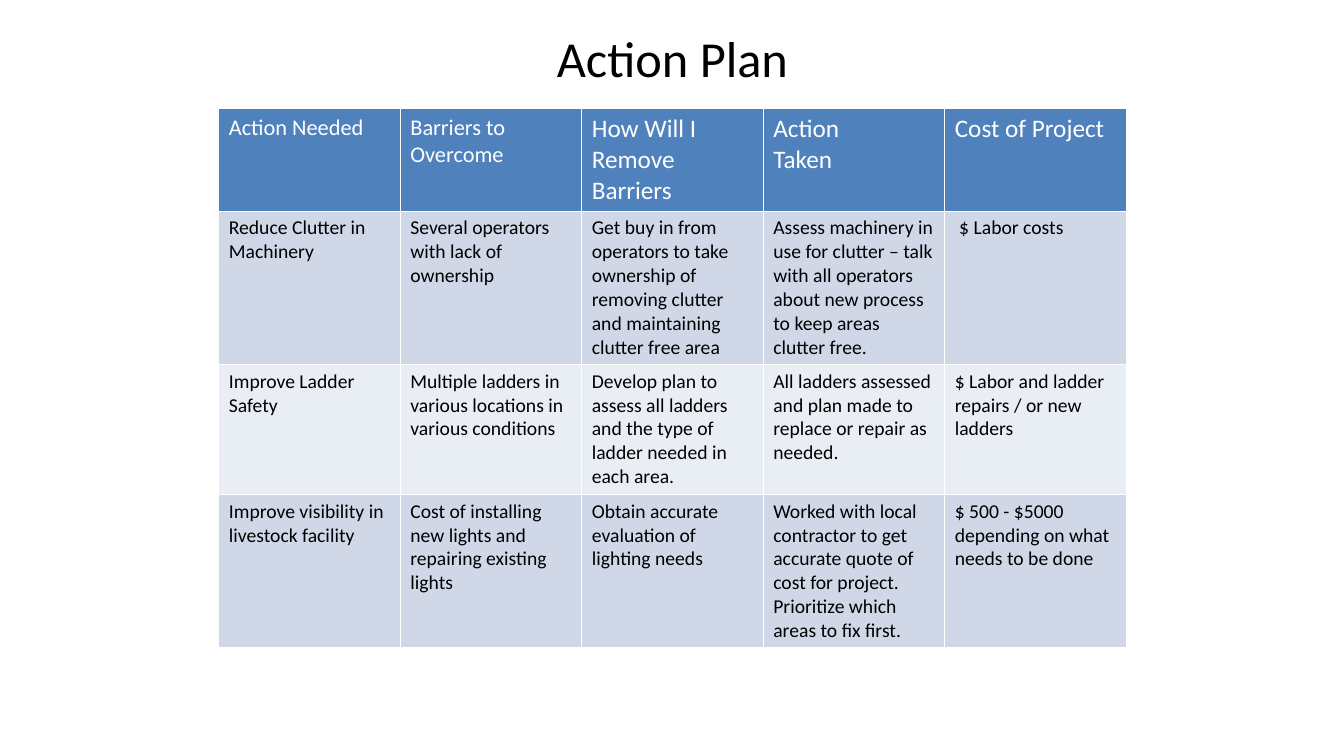
from lxml.etree import SubElement
from pptx import Presentation
from pptx.dml.color import RGBColor
from pptx.enum.text import MSO_ANCHOR, PP_ALIGN
from pptx.oxml.ns import qn
from pptx.util import Inches, Pt

WHITE, BLACK, HEADER_BLUE = "FFFFFF", "000000", "4F81BD"
BANDS = ["D0D8E8", "E9EDF4"]
ROW_HEIGHTS = [1.01, 1.52, 1.29, 1.52]
HEADER_SIZES = [16, 16, 18, 18, 18]
PLAN = [
    ["Action Needed", "Barriers to Overcome", "How Will I Remove Barriers",
     "Action\nTaken", "Cost of Project"],
    ["Reduce Clutter in Machinery",
     "Several operators with lack of ownership",
     "Get buy in from operators to take ownership of removing clutter "
     "and maintaining clutter free area",
     "Assess machinery in use for clutter – talk with all operators "
     "about new process to keep areas clutter free.",
     " $ Labor costs"],
    ["Improve Ladder Safety",
     "Multiple ladders in various locations in various conditions",
     "Develop plan to assess all ladders and the type of ladder needed in each area.",
     "All ladders assessed and plan made to replace or repair as needed.",
     "$ Labor and ladder repairs / or new ladders"],
    ["Improve visibility in livestock facility",
     "Cost of installing new lights and repairing existing lights",
     "Obtain accurate evaluation of lighting needs",
     "Worked with local contractor to get accurate quote of cost for project. "
     "Prioritize which areas to fix first.",
     "$ 500 - $5000 depending on what needs to be done"],
]


def color(value):
    """Turn a hex string into a colour."""
    return RGBColor.from_string(value)


def write(frame, text, size, fill=BLACK, align=PP_ALIGN.LEFT):
    """Write text into a frame, one paragraph per line."""
    frame.text = text
    for para in frame.paragraphs:
        para.alignment = align
        for span in para.runs:
            span.font.name = "Calibri"
            span.font.size = Pt(size)
            span.font.bold = False
            span.font.color.rgb = color(fill)


def outline(cell, line_color=WHITE, width=1):
    """Draw a line on all four sides of a cell."""
    properties = cell._tc.get_or_add_tcPr()
    for side in ("a:lnL", "a:lnR", "a:lnT", "a:lnB"):
        line = SubElement(properties, qn(side), w=str(Pt(width)))
        fill = SubElement(line, qn("a:solidFill"))
        SubElement(fill, qn("a:srgbClr"), val=line_color)


def place_title(page, left, top, width, height):
    """Place and format the slide title in the given box."""
    title = page.shapes.title
    title.left, title.top = Inches(left), Inches(top)
    title.width, title.height = Inches(width), Inches(height)
    write(title.text_frame, "Action Plan", 36, align=PP_ALIGN.CENTER)
    title.text_frame.vertical_anchor = MSO_ANCHOR.MIDDLE


def place_plan(page, left, top, width):
    """Place the action plan table with equal columns across the given width."""
    columns = len(PLAN[0])
    table = page.shapes.add_table(
        len(PLAN), columns, Inches(left), Inches(top),
        Inches(width), Inches(sum(ROW_HEIGHTS))).table
    for column in table.columns:
        column.width = Inches(width / columns)
    for row, height in enumerate(ROW_HEIGHTS):
        table.rows[row].height = Inches(height)
        for column, text in enumerate(PLAN[row]):
            cell = table.cell(row, column)
            outline(cell)
            cell.fill.solid()
            if row == 0:
                cell.fill.fore_color.rgb = color(HEADER_BLUE)
                write(cell.text_frame, text, HEADER_SIZES[column], WHITE)
            else:
                cell.fill.fore_color.rgb = color(BANDS[(row - 1) % 2])
                write(cell.text_frame, text, 14)


def main():
    """Build the deck and save it."""
    deck = Presentation()
    deck.slide_width, deck.slide_height = Inches(13.33), Inches(7.5)
    page = deck.slides.add_slide(deck.slide_layouts[5])
    place_title(page, 2.17, 0.3, 9, 0.53)
    place_plan(page, 2.17, 1.08, 9)
    deck.save("out.pptx")


if __name__ == "__main__":
    main()
